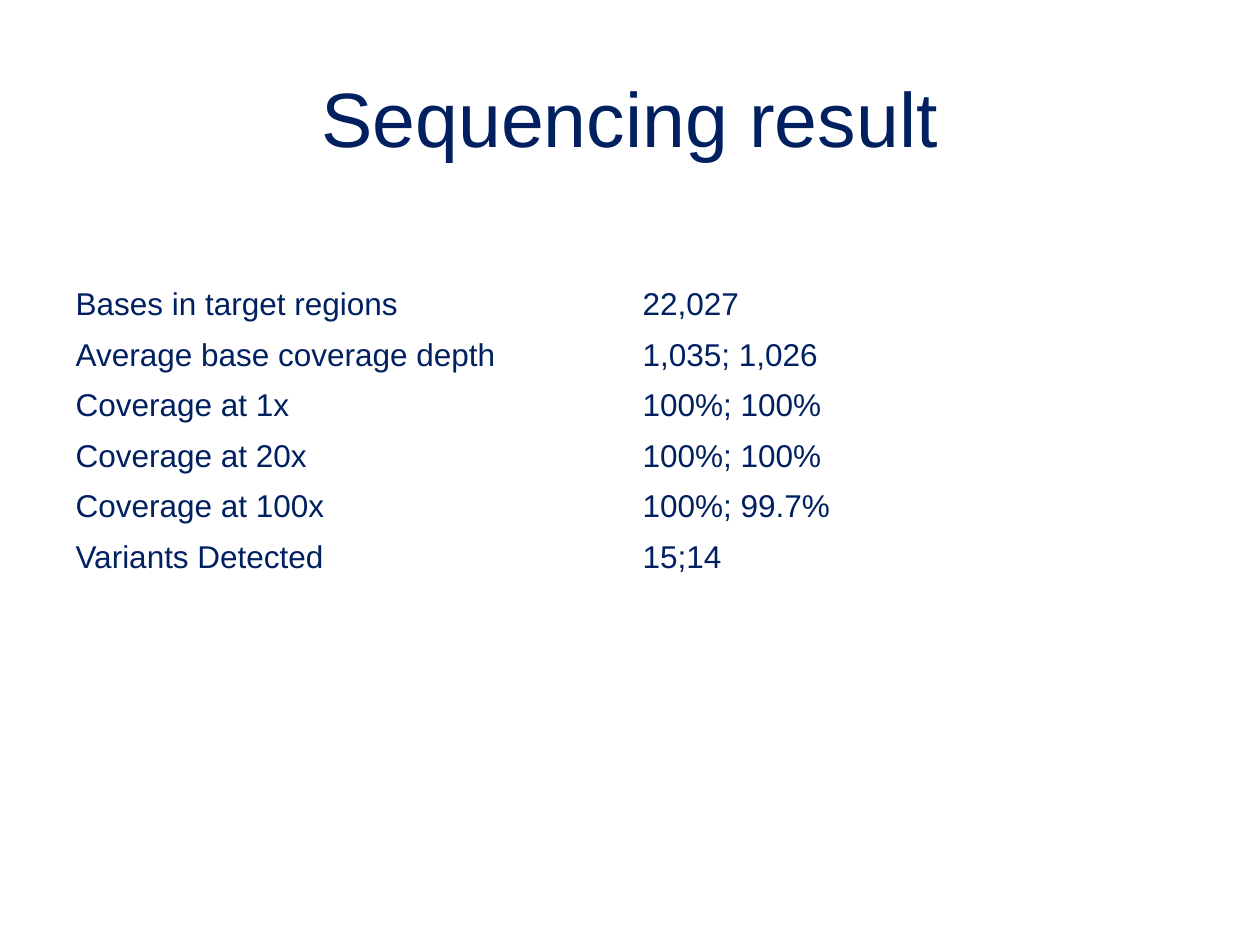
from pptx import Presentation
from pptx.dml.color import RGBColor
from pptx.enum.text import MSO_ANCHOR, PP_ALIGN
from pptx.util import Inches, Pt

MIDDLE = MSO_ANCHOR.MIDDLE
LEFT, CENTER = PP_ALIGN.LEFT, PP_ALIGN.CENTER
NAVY = "002060"


def color(hex_string):
    return RGBColor.from_string(hex_string)


def write(frame, text, size=18, align=LEFT):
    frame.vertical_anchor = MIDDLE
    frame.word_wrap = True
    para = frame.paragraphs[0]
    para.alignment = align
    span = para.add_run()
    span.text = text
    span.font.name = "Arial"
    span.font.size = Pt(size)
    span.font.color.rgb = color(NAVY)


deck = Presentation()
deck.slide_width, deck.slide_height = Inches(10), Inches(7.5)
page = deck.slides.add_slide(deck.slide_layouts[6])

# Title
title = page.shapes.add_textbox(Inches(0.5), Inches(0.3), Inches(9), Inches(1.25))
write(title.text_frame, "Sequencing result", size=44, align=CENTER)

# Result table, with an empty header row
results = [
    ("", ""),
    ("Bases in target regions", "22,027"),
    ("Average base coverage depth", "1,035; 1,026"),
    ("Coverage at 1x", "100%; 100%"),
    ("Coverage at 20x", "100%; 100%"),
    ("Coverage at 100x", "100%; 99.7%"),
    ("Variants Detected", "15;14"),
]
table = page.shapes.add_table(
    len(results), 2, Inches(0.5), Inches(1.82), Inches(9), Inches(0.4 * len(results))
).table
table.first_row = False
table.horz_banding = False
for row, values in zip(table.rows, results):
    for cell, value in zip(row.cells, values):
        cell.fill.background()
        cell.vertical_anchor = MIDDLE
        if value:
            write(cell.text_frame, value)

deck.save("out.pptx")
